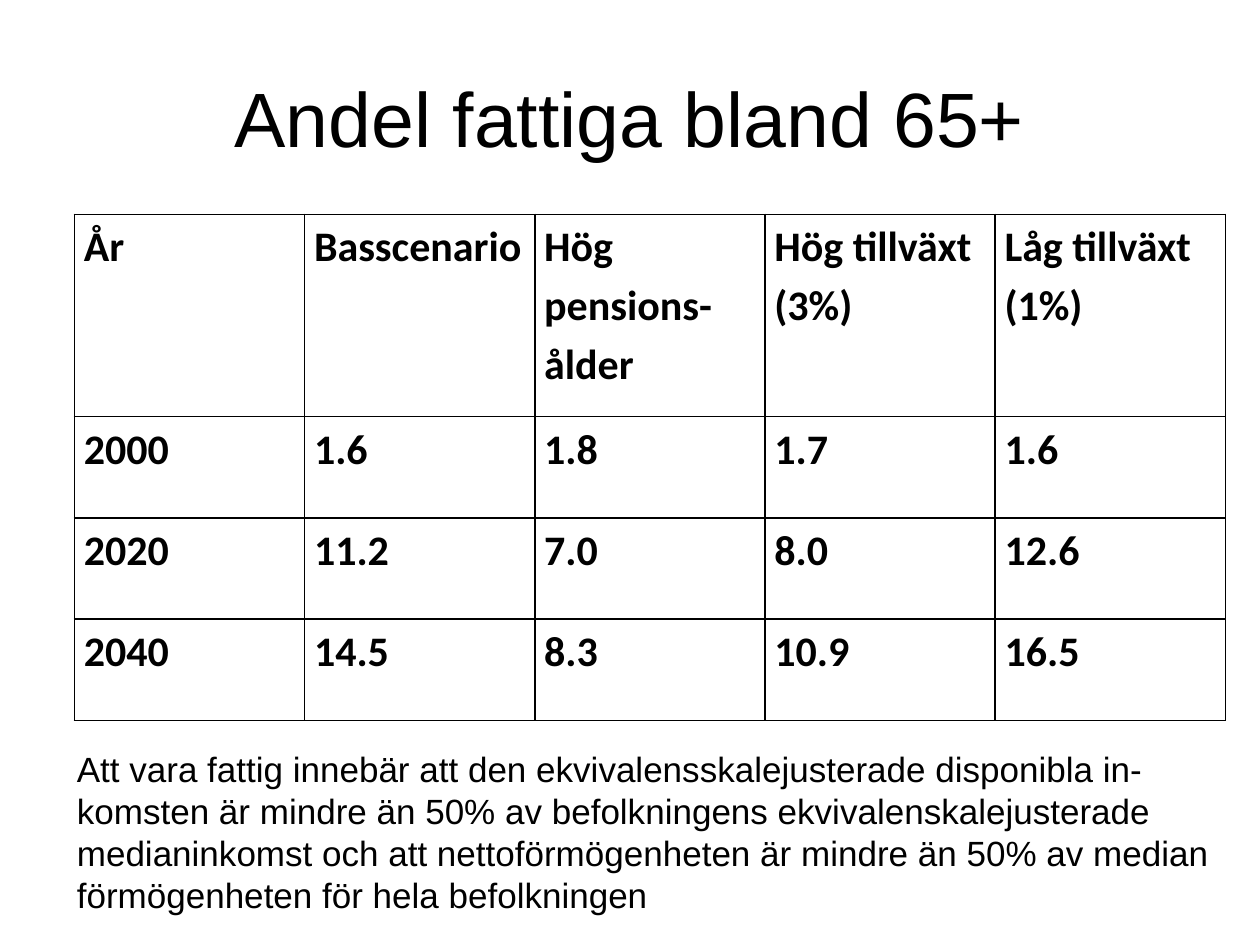
from dataclasses import dataclass

from lxml import etree
from pptx import Presentation
from pptx import util as u
from pptx.dml.color import RGBColor
from pptx.enum import text
from pptx.oxml.ns import qn


@dataclass(frozen=True)
class Theme:
    ink: str = "000000"
    body_font: str = "Arial"
    table_font: str = "Calibri"
    title_size: int = 44
    table_size: int = 24
    note_size: int = 20
    border: float = 1


THEME = Theme()
TITLE = "Andel fattiga bland 65+"
ROWS = [
    ["År", "Basscenario", "Hög pensions-ålder", "Hög tillväxt (3%)", "Låg tillväxt (1%)"],
    ["2000", "1.6", "1.8", "1.7", "1.6"],
    ["2020", "11.2", "7.0", "8.0", "12.6"],
    ["2040", "14.5", "8.3", "10.9", "16.5"],
]
NOTE = (
    "Att vara fattig innebär att den ekvivalensskalejusterade disponibla in-komsten "
    "är mindre än 50% av befolkningens ekvivalenskalejusterade medianinkomst och att "
    "nettoförmögenheten är mindre än 50% av median förmögenheten för hela befolkningen"
)


def write(tf, content, *, size, font=THEME.body_font, bold=False,
          align=text.PP_ALIGN.LEFT, spacing=None):
    p = tf.paragraphs[0]
    p.alignment = align
    p.line_spacing = spacing
    r = p.add_run()
    r.text = content
    r.font.name = font
    r.font.size = u.Pt(size)
    r.font.bold = bold
    r.font.color.rgb = RGBColor.from_string(THEME.ink)


def add_text(s, content, left, top, width, height,
             anchor=text.MSO_ANCHOR.TOP, **fmt):
    box = s.shapes.add_textbox(u.Cm(left), u.Cm(top), u.Cm(width), u.Cm(height))
    tf = box.text_frame
    tf.word_wrap = True
    tf.vertical_anchor = anchor
    write(tf, content, **fmt)


def set_borders(cell):
    props = cell._tc.get_or_add_tcPr()
    for i, side in enumerate(("a:lnL", "a:lnR", "a:lnT", "a:lnB")):
        line = etree.Element(qn(side), w=str(u.Pt(THEME.border)))
        fill = etree.SubElement(line, qn("a:solidFill"))
        etree.SubElement(fill, qn("a:srgbClr"), val=THEME.ink)
        props.insert(i, line)  # borders must precede the cell fill


def add_grid(s, rows, left, top, col_width, head_height, row_height):
    n_rows, n_cols = len(rows), len(rows[0])
    height = head_height + row_height * (n_rows - 1)
    table = s.shapes.add_table(n_rows, n_cols, u.Cm(left), u.Cm(top),
                               u.Cm(col_width * n_cols), u.Cm(height)).table
    table.first_row = table.horz_banding = False
    for col in table.columns:
        col.width = u.Cm(col_width)
    for i, values in enumerate(rows):
        table.rows[i].height = u.Cm(row_height if i else head_height)
        for j, value in enumerate(values):
            cell = table.cell(i, j)
            cell.margin_left = cell.margin_right = u.Cm(0.19)
            cell.margin_top = cell.margin_bottom = 0
            cell.fill.background()
            set_borders(cell)
            write(cell.text_frame, value, size=THEME.table_size,
                  font=THEME.table_font, bold=True, spacing=1.15)


def main():
    prs = Presentation()
    prs.slide_width, prs.slide_height = u.Cm(25.4), u.Cm(19.05)
    s = prs.slides.add_slide(prs.slide_layouts[6])
    add_text(s, TITLE, 1.27, 0.76, 22.86, 3.18, anchor=text.MSO_ANCHOR.MIDDLE,
             size=THEME.title_size, align=text.PP_ALIGN.CENTER)
    add_grid(s, ROWS, left=1.5, top=4.32, col_width=4.64,
             head_height=4.08, row_height=2.04)
    add_text(s, NOTE, 1.3, 14.94, 23.4, 3.68, size=THEME.note_size)
    prs.save("out.pptx")


if __name__ == "__main__":
    main()
